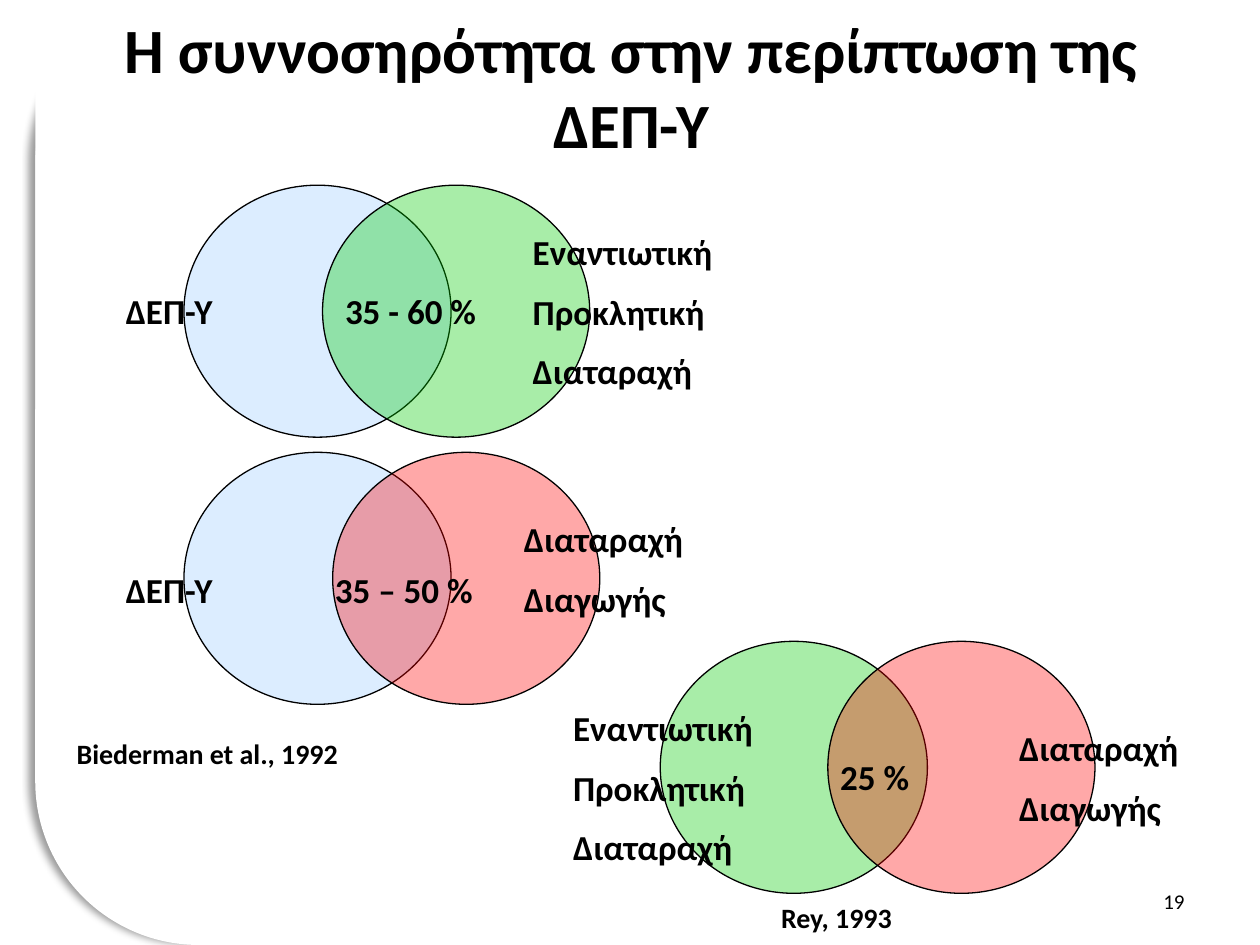
import typing

import lxml.etree
import pptx
import pptx.dml.color
import pptx.enum.shapes
import pptx.enum.text
import pptx.oxml
import pptx.oxml.ns
import pptx.util

SHAPES = pptx.enum.shapes.MSO_SHAPE
ALIGN = pptx.enum.text.PP_ALIGN
ANCHOR = pptx.enum.text.MSO_ANCHOR

COLUMNS, ROWS = 100, 75
CIRCLE_W, CIRCLE_H = 21.2, 20
BLACK, WHITE = "000000", "FFFFFF"
BLUE, GREEN, RED = "99CCFF", "00CC00", "FF0000"
FONT = "Calibri"
ADHD = "ΔΕΠ-Υ"
OPPOSITIONAL = "Εναντιωτική\nΠροκλητική\nΔιαταραχή"
CONDUCT = "Διαταραχή\nΔιαγωγής"


class Box(typing.NamedTuple):
    """A place on the grid, in columns and rows."""
    left: float
    top: float
    width: float
    height: float


class Label(typing.NamedTuple):
    """A text with its place and size."""
    text: str
    box: Box
    size: int = 20
    bold: bool = True
    align: ALIGN = ALIGN.LEFT
    anchor: ANCHOR = ANCHOR.TOP


class Venn(typing.NamedTuple):
    """Two overlapping circles with their labels."""
    top: float
    lefts: tuple[float, float]
    colors: tuple[str, str]
    labels: tuple[Label, Label, Label]


VENNS = [
    Venn(14.7, (14.6, 25.6), (BLUE, GREEN), (
        Label("35 - 60 %", Box(26.4, 22.5, 13.4, 3.8)),
        Label(ADHD, Box(9, 22.5, 11, 4.4)),
        Label(OPPOSITIONAL, Box(41.3, 17.8, 17.3, 14.5)))),
    Venn(35.9, (14.6, 26.4), (BLUE, RED), (
        Label("35 – 50 %", Box(25.6, 44.6, 14.2, 3.8)),
        Label(ADHD, Box(9, 44.6, 11, 4.4)),
        Label(CONDUCT, Box(40.6, 40.6, 15, 9.4)))),
    Venn(50.9, (52.4, 65.7), (GREEN, RED), (
        Label("25 %", Box(65.7, 59.5, 8.8, 3.8)),
        Label(OPPOSITIONAL, Box(44.5, 55.6, 17.3, 14.5)),
        Label(CONDUCT, Box(79.9, 57.2, 15, 9.4)))),
]
NOTES = [
    Label("Biederman et al., 1992", Box(5.1, 58, 31.1, 3.7), 16),
    Label("Rey, 1993", Box(61, 71, 20.5, 3.7), 16),
    Label("19", Box(71.7, 69.5, 23.3, 4), 12, False, ALIGN.RIGHT, ANCHOR.MIDDLE),
]
TITLE = Label("Η συννοσηρότητα στην περίπτωση της ΔΕΠ-Υ", Box(5.1, 1.3, 90, 11),
              36, True, ALIGN.CENTER, ANCHOR.MIDDLE)

prs = pptx.Presentation()
prs.slide_width = pptx.util.Inches(10)
prs.slide_height = pptx.util.Inches(7.5)


def rgb(color: str) -> pptx.dml.color.RGBColor:
    """Turn a hex string into a colour."""
    return pptx.dml.color.RGBColor.from_string(color)


def place(box: Box) -> tuple[int, int, int, int]:
    """Turn grid columns and rows into slide lengths."""
    col, row = prs.slide_width / COLUMNS, prs.slide_height / ROWS
    return (round(box.left * col), round(box.top * row),
            round(box.width * col), round(box.height * row))


def add_shape(s, kind: SHAPES, box: Box, color: str, line: str | None = None,
              opacity: int = 100):
    """Add a filled shape without shadow."""
    sp = s.shapes.add_shape(kind, *place(box))
    sp.shadow.inherit = False
    sp.fill.solid()
    sp.fill.fore_color.rgb = rgb(color)
    if opacity < 100:
        clr = sp.element.spPr.find(".//" + pptx.oxml.ns.qn("a:srgbClr"))
        lxml.etree.SubElement(clr, pptx.oxml.ns.qn("a:alpha"), val=str(opacity * 1000))
    if line:
        sp.line.color.rgb = rgb(line)
        sp.line.width = pptx.util.Pt(0.75)
    else:
        sp.line.fill.background()
    return sp


def write(sp, label: Label) -> None:
    """Put a label's text into a shape and format it."""
    tf = sp.text_frame
    tf.word_wrap = True
    tf.vertical_anchor = label.anchor
    tf.text = label.text
    for i, p in enumerate(tf.paragraphs):
        p.alignment = label.align
        p.space_before = pptx.util.Pt(label.size / 2 if i else 0)
        for r in p.runs:
            r.font.name = FONT
            r.font.size = pptx.util.Pt(label.size)
            r.font.bold = label.bold
            r.font.color.rgb = rgb(BLACK)


def add_label(s, label: Label) -> None:
    """Add a text box for a label."""
    write(s.shapes.add_textbox(*place(label.box)), label)


def add_page(s) -> None:
    """Add the white page with one rounded corner and a shadow on its left."""
    page = add_shape(s, SHAPES.ROUNDED_RECTANGLE, Box(2.8, 0, 97.2, 75), WHITE)
    page.adjustments[0] = 0.173
    effects = page.element.spPr.find(pptx.oxml.ns.qn("a:effectLst"))
    effects.append(pptx.oxml.parse_xml(
        f'<a:outerShdw {pptx.oxml.ns.nsdecls("a")} blurRad="{pptx.util.Pt(4)}" '
        f'dist="{pptx.util.Pt(3)}" dir="10800000" algn="r" rotWithShape="0">'
        f'<a:srgbClr val="{BLACK}"><a:alpha val="40000"/></a:srgbClr></a:outerShdw>'))
    for box in (Box(39.8, 18.3, 60.2, 56.7), Box(2.8, 0, 97.2, 52.5)):
        add_shape(s, SHAPES.RECTANGLE, box, WHITE)


def add_title(s, label: Label) -> None:
    """Move the title placeholder above the page and fill it."""
    sp = s.shapes.title
    sp.element.getparent().append(sp.element)
    sp.left, sp.top, sp.width, sp.height = place(label.box)
    write(sp, label)
    sp.text_frame.auto_size = pptx.enum.text.MSO_AUTO_SIZE.NONE


def add_venn(s, venn: Venn) -> None:
    """Add a pair of see-through circles and their labels."""
    for left, color in zip(venn.lefts, venn.colors):
        box = Box(left, venn.top, CIRCLE_W, CIRCLE_H)
        add_shape(s, SHAPES.OVAL, box, color, BLACK, 34)
    for label in venn.labels:
        add_label(s, label)


def main() -> None:
    """Build the slide and save it."""
    s = prs.slides.add_slide(prs.slide_layouts[5])
    add_page(s)
    add_title(s, TITLE)
    for venn in VENNS:
        add_venn(s, venn)
    for note in NOTES:
        add_label(s, note)
    prs.save("out.pptx")


if __name__ == "__main__":
    main()
